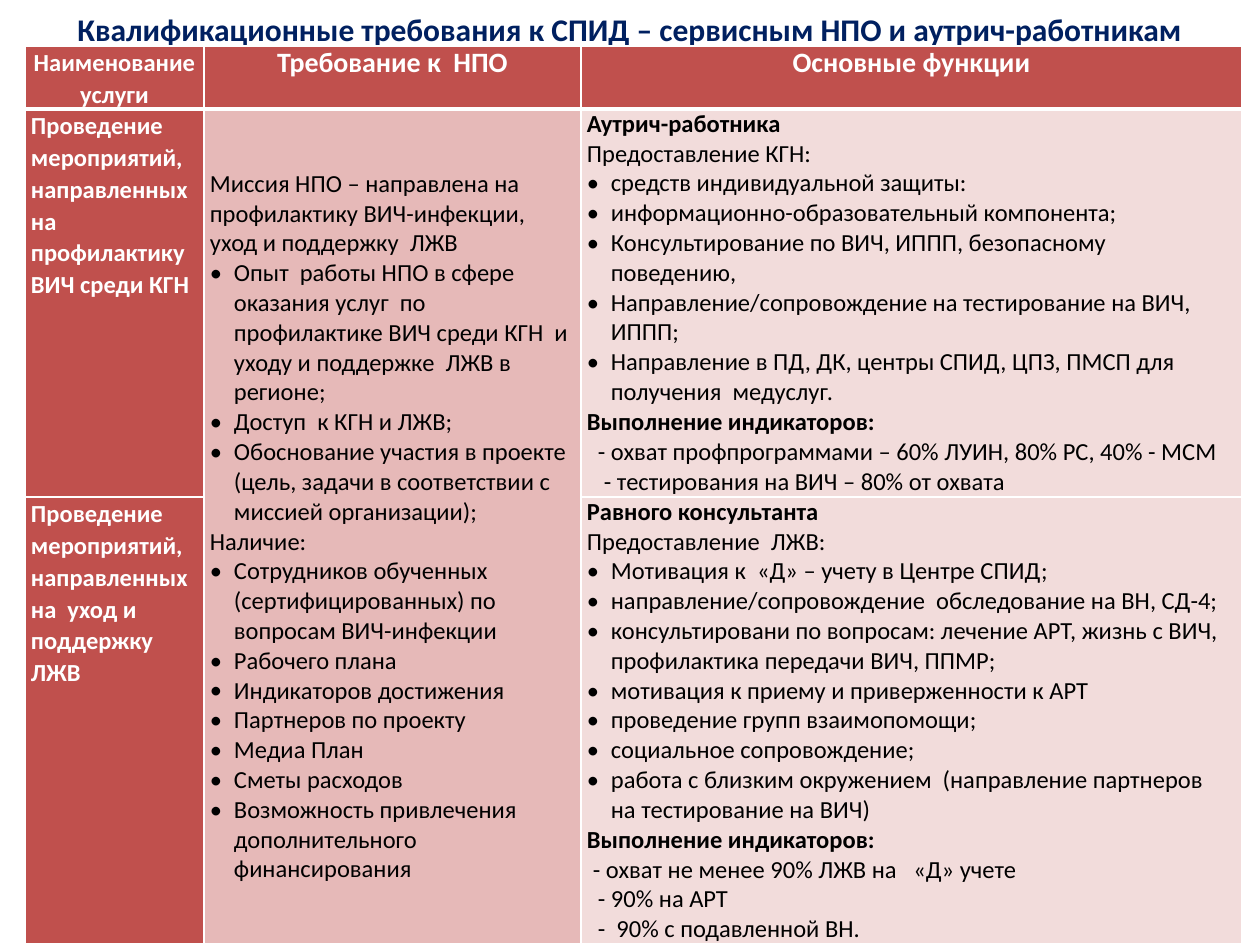
from lxml.etree import SubElement
from pptx import Presentation
from pptx.dml.color import RGBColor
from pptx.enum.text import MSO_ANCHOR, PP_ALIGN
from pptx.oxml.ns import qn
from pptx.util import Emu, Pt

SCALE = 914400 / 126
WHITE, BLACK, NAVY = "FFFFFF", "000000", "002060"
RED, ROSE, PALE = "C0504D", "E6B9B8", "F2DCDB"


def px(n):
    return Emu(round(n * SCALE))


def style(p, size, color, bold):
    p.font.name = "Calibri"
    p.font.size = Pt(size)
    p.font.bold = bold
    p.font.color.rgb = RGBColor.from_string(color)


HEADERS = [("Наименование услуги", 14), ("Требование к  НПО", 16), ("Основные функции", 16)]
SERVICES = [
    "Проведение мероприятий, направленных на профилактику ВИЧ среди КГН",
    "Проведение мероприятий, направленных на  уход и поддержку ЛЖВ",
]
REQUIREMENTS = [
    ("plain", "Миссия НПО – направлена на профилактику ВИЧ-инфекции, уход и поддержку  ЛЖВ"),
    ("bullet", "Опыт  работы НПО в сфере оказания услуг  по профилактике ВИЧ среди КГН  и  уходу и поддержке  ЛЖВ в регионе;"),
    ("bullet", "Доступ  к КГН и ЛЖВ;"),
    ("bullet", "Обоснование участия в проекте (цель, задачи в соответствии с миссией организации);"),
    ("plain", "Наличие:"),
    ("bullet", "Сотрудников обученных (сертифицированных) по вопросам ВИЧ-инфекции"),
    ("bullet", "Рабочего плана"),
    ("bullet", "Индикаторов достижения"),
    ("bullet", "Партнеров по проекту"),
    ("bullet", "Медиа План"),
    ("bullet", "Сметы расходов"),
    ("bullet", "Возможность привлечения дополнительного финансирования"),
]
OUTREACH = [
    ("bold", "Аутрич-работника"),
    ("plain", "Предоставление КГН:"),
    ("bullet", "средств индивидуальной защиты:"),
    ("bullet", "информационно-образовательный компонента;"),
    ("bullet", "Консультирование по ВИЧ, ИППП, безопасному поведению,"),
    ("bullet", "Направление/сопровождение на тестирование на ВИЧ, ИППП;"),
    ("bullet", "Направление в ПД, ДК, центры СПИД, ЦПЗ, ПМСП для получения  медуслуг."),
    ("bold", "Выполнение индикаторов:"),
    ("dash", "- охват профпрограммами – 60% ЛУИН, 80% РС, 40% - МСМ"),
    ("deep dash", "- тестирования на ВИЧ – 80% от охвата"),
]
PEER = [
    ("bold", "Равного консультанта"),
    ("plain", "Предоставление  ЛЖВ:"),
    ("bullet", "Мотивация к  «Д» – учету в Центре СПИД;"),
    ("bullet", "направление/сопровождение  обследование на ВН, СД-4;"),
    ("bullet", "консультировани по вопросам: лечение АРТ, жизнь с ВИЧ, профилактика передачи ВИЧ, ППМР;"),
    ("bullet", "мотивация к приему и приверженности к АРТ"),
    ("bullet", "проведение групп взаимопомощи;"),
    ("bullet", "социальное сопровождение;"),
    ("bullet", "работа с близким окружением  (направление партнеров  на тестирование на ВИЧ)"),
    ("bold", "Выполнение индикаторов:"),
    ("shallow dash", "- охват не менее 90% ЛЖВ на   «Д» учете"),
    ("dash", "- 90% на АРТ"),
    ("dash", "-  90% с подавленной ВН."),
]
INDENTS = {"bullet": 24, "shallow dash": 6, "dash": 11, "deep dash": 17}

prs = Presentation()
prs.slide_width, prs.slide_height = px(1260), px(945)
s = prs.slides.add_slide(prs.slide_layouts[6])

tf = s.shapes.add_textbox(0, 0, px(1260), px(58)).text_frame
tf.word_wrap = True
tf.vertical_anchor = MSO_ANCHOR.MIDDLE
p = tf.paragraphs[0]
p.text = "Квалификационные требования к СПИД – сервисным НПО и аутрич-работникам"
p.alignment = PP_ALIGN.CENTER
style(p, 18, NAVY, True)

table = s.shapes.add_table(3, 3, px(25), px(46), px(1217), px(898)).table
table.first_row = table.horz_banding = False
for column, width in zip(table.columns, (179, 377, 661)):
    column.width = px(width)
for row, height in zip(table.rows, (63, 388, 447)):
    row.height = px(height)
table.cell(1, 1).merge(table.cell(2, 1))

for i in range(3):
    for j in range(3):
        cell = table.cell(i, j)
        cell.margin_left = cell.margin_right = px(6)
        cell.margin_top = cell.margin_bottom = 0
        tcPr = cell._tc.get_or_add_tcPr()
        for side in "LRTB":
            heavy = (i, side) in ((0, "B"), (1, "T"))
            ln = SubElement(tcPr, qn("a:ln" + side), w=str(Pt(3 if heavy else 1)))
            SubElement(SubElement(ln, qn("a:solidFill")), qn("a:srgbClr"), val=WHITE)
        cell.fill.solid()
        color = RED if i == 0 else (RED, ROSE, PALE)[j]
        cell.fill.fore_color.rgb = RGBColor.from_string(color)

for j, (text, size) in enumerate(HEADERS):
    p = table.cell(0, j).text_frame.paragraphs[0]
    p.text = text
    p.alignment = PP_ALIGN.CENTER
    p.space_after = Pt(12 if j else 6)
    p.line_spacing = 1 if j else 1.07
    style(p, size, WHITE, True)

for i, text in enumerate(SERVICES, 1):
    p = table.cell(i, 0).text_frame.paragraphs[0]
    p.text = text
    p.line_spacing = 1.07
    p.space_after = Pt(8)
    style(p, 14, WHITE, True)

table.cell(1, 1).margin_top = px(60)
for i, j, items in ((1, 1, REQUIREMENTS), (1, 2, OUTREACH), (2, 2, PEER)):
    tf = table.cell(i, j).text_frame
    for n, (kind, text) in enumerate(items):
        p = tf.add_paragraph() if n else tf.paragraphs[0]
        p.text = text
        style(p, 14, BLACK, kind == "bold")
        pPr = p._p.get_or_add_pPr()
        if kind in INDENTS:
            pPr.set("marL", str(px(INDENTS[kind])))
        if kind == "bullet":
            pPr.set("indent", str(-px(INDENTS[kind])))
            for tag, attrs in (("a:buFont", {"typeface": "Calibri"}), ("a:buChar", {"char": "•"})):
                bullet = pPr.makeelement(qn(tag), attrs)
                pPr.insert_element_before(bullet, "a:tabLst", "a:defRPr", "a:extLst")

prs.save("out.pptx")
